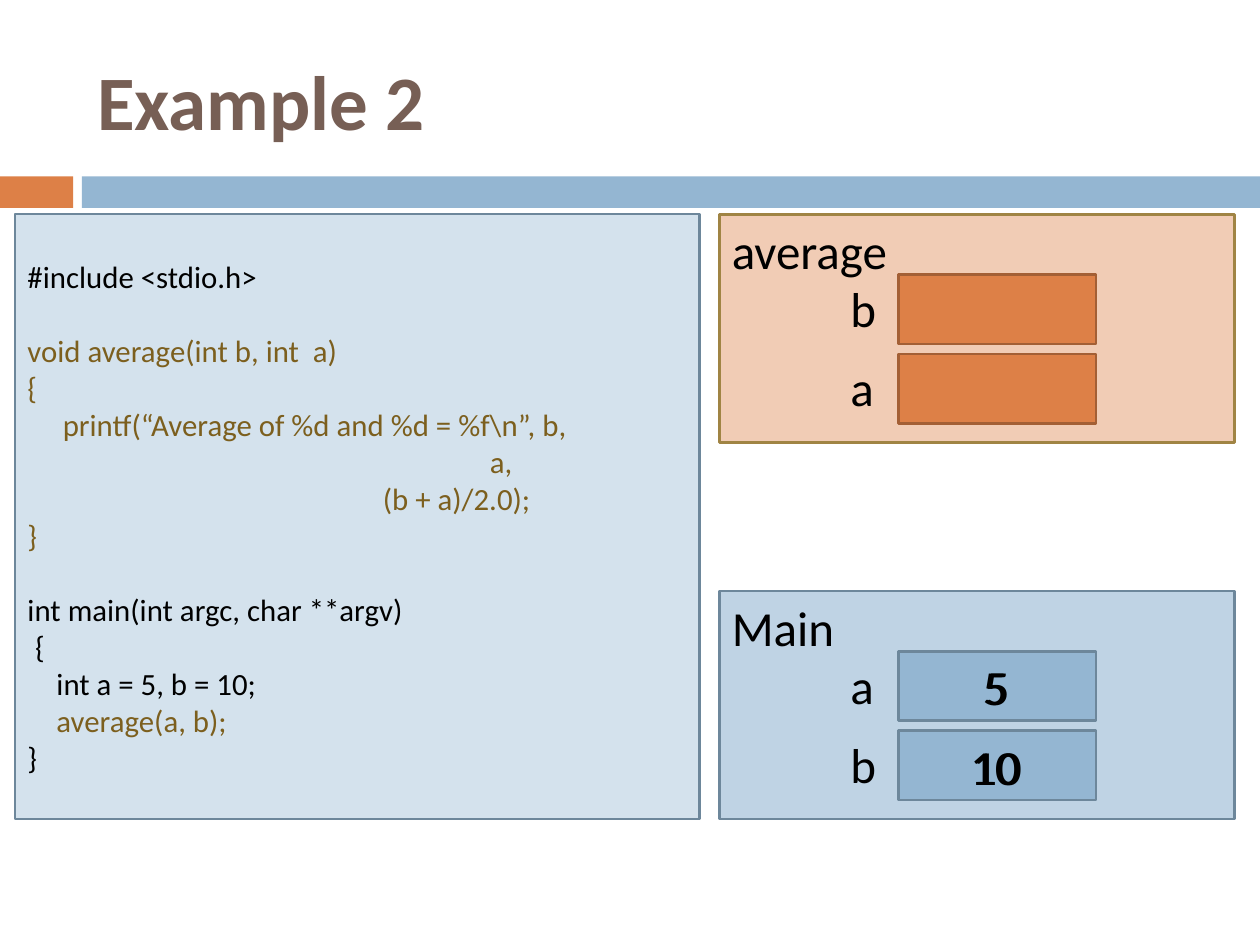
"""Build a slide that traces a C function call through its memory boxes."""
from pptx import Presentation
from pptx.dml.color import RGBColor
from pptx.enum.shapes import MSO_SHAPE
from pptx.enum.text import MSO_ANCHOR, PP_ALIGN
from pptx.util import Inches, Pt

RECT = MSO_SHAPE.RECTANGLE
TOP, MIDDLE = MSO_ANCHOR.TOP, MSO_ANCHOR.MIDDLE
LEFT, CENTER = PP_ALIGN.LEFT, PP_ALIGN.CENTER
COLS, ROWS = 10, 7.5
BLACK, BROWN, TITLE = "000000", "7C5F1E", "775F55"
ORANGE, BLUE, SLATE = "DD8047", "94B6D2", "6D879B"
CODE_SIZE, CODE_LINE = 17.6, 21.5

CODE = [
    ("#include <stdio.h>", 0, BLACK, 0),
    ("void average(int b, int  a)", 0, BROWN, 1),
    ("{", 0, BROWN, 0),
    ("printf(“Average of %d and %d = %f\\n”, b,", 0.28, BROWN, 0),
    ("a,", 3.67, BROWN, 0),
    ("(b + a)/2.0);", 2.82, BROWN, 0),
    ("}", 0, BROWN, 0),
    ("int main(int argc, char **argv)", 0, BLACK, 1),
    ("{", 0.06, BLACK, 0),
    ("int a = 5, b = 10;", 0.23, BLACK, 0),
    ("average(a, b);", 0.23, BROWN, 0),
    ("}", 0, BLACK, 0),
]


def rgb(color):
    """Turn a hex string into a colour."""
    return RGBColor.from_string(color)


def write(p, text, size=28, color=BLACK, bold=False, align=LEFT, indent=0, before=0):
    """Write one formatted run into a paragraph."""
    p.alignment = align
    p.space_before = Pt(before)
    if indent:
        p._p.get_or_add_pPr().set("marL", str(Inches(indent)))
    r = p.add_run()
    r.text = text
    r.font.name, r.font.size, r.font.bold = "Calibri", Pt(size), bold
    r.font.color.rgb = rgb(color)


class Deck:
    """Hold the presentation, its grid and the current slide."""

    def __init__(self):
        """Start a one-slide deck."""
        self.prs = Presentation()
        self.prs.slide_width, self.prs.slide_height = Inches(10), Inches(7.5)
        self.s = self.prs.slides.add_slide(self.prs.slide_layouts[5])

    def grid(self, x, y, w, h):
        """Turn columns and rows into slide lengths."""
        col, row = self.prs.slide_width / COLS, self.prs.slide_height / ROWS
        return int(x * col), int(y * row), int(w * col), int(h * row)

    def title(self, text, *at):
        """Move and fill the title placeholder."""
        sp = self.s.shapes.title
        sp.left, sp.top, sp.width, sp.height = self.grid(*at)
        sp.text_frame.vertical_anchor = MIDDLE
        write(sp.text_frame.paragraphs[0], text, size=44, color=TITLE, bold=True)

    def box(self, *at, fill, line=None, text="", anchor=MIDDLE, align=CENTER):
        """Draw a rectangle and return its text frame."""
        sp = self.s.shapes.add_shape(RECT, *self.grid(*at))
        sp.shadow.inherit = False
        sp.fill.solid()
        sp.fill.fore_color.rgb = rgb(fill)
        if line:
            sp.line.color.rgb, sp.line.width = rgb(line), Pt(1.5)
        else:
            sp.line.fill.background()
        tf = sp.text_frame
        tf.word_wrap, tf.vertical_anchor = True, anchor
        if text:
            write(tf.paragraphs[0], text, align=align)
        return tf

    def label(self, text, x, y, w=0.55):
        """Place a short text beside or over a box."""
        tf = self.s.shapes.add_textbox(*self.grid(x, y, w, 0.57)).text_frame
        tf.word_wrap = True
        write(tf.paragraphs[0], text)

    def code(self, lines, *at):
        """Draw the code panel with one paragraph a line."""
        tf = self.box(*at, fill="D4E2ED", line=SLATE)
        for i, (text, indent, color, gap) in enumerate(lines):
            p = tf.add_paragraph() if i else tf.paragraphs[0]
            write(p, text, size=CODE_SIZE, color=color, indent=indent,
                  before=gap * CODE_LINE)

    def frame(self, name, y, variables, fill, line, cell_fill, cell_line):
        """Draw a stack frame with a labelled cell for each variable."""
        self.box(5.71, y, 4.09, 1.81, fill=fill, line=line, text=name,
                 anchor=TOP, align=LEFT)
        for i, (variable, value) in enumerate(variables):
            top = y + 0.48 + i * 0.63
            self.box(7.13, top, 1.57, 0.55, fill=cell_fill, line=cell_line, text=value)
            self.label(variable, 6.65, top - 0.02)


def main():
    """Build and save the slide."""
    d = Deck()
    d.box(0, 1.4, 0.58, 0.25, fill=ORANGE)
    d.box(0.65, 1.4, 9.35, 0.25, fill=BLUE)
    d.title("Example 2", 0.67, 0.25, 8.92, 1.08)
    d.code(CODE, 0.12, 1.7, 5.43, 4.8)
    d.frame("average", 1.7, [("b", ""), ("a", "")], "F1CCB5", "A08444", ORANGE, "A35F35")
    d.frame("Main", 4.69, [("a", "5"), ("b", "10")], "BFD3E4", SLATE, BLUE, SLATE)
    d.label("5", 7.7, 5.16, 0.39)
    d.label("10", 7.6, 5.8, 0.71)
    d.prs.save("out.pptx")


if __name__ == "__main__":
    main()
